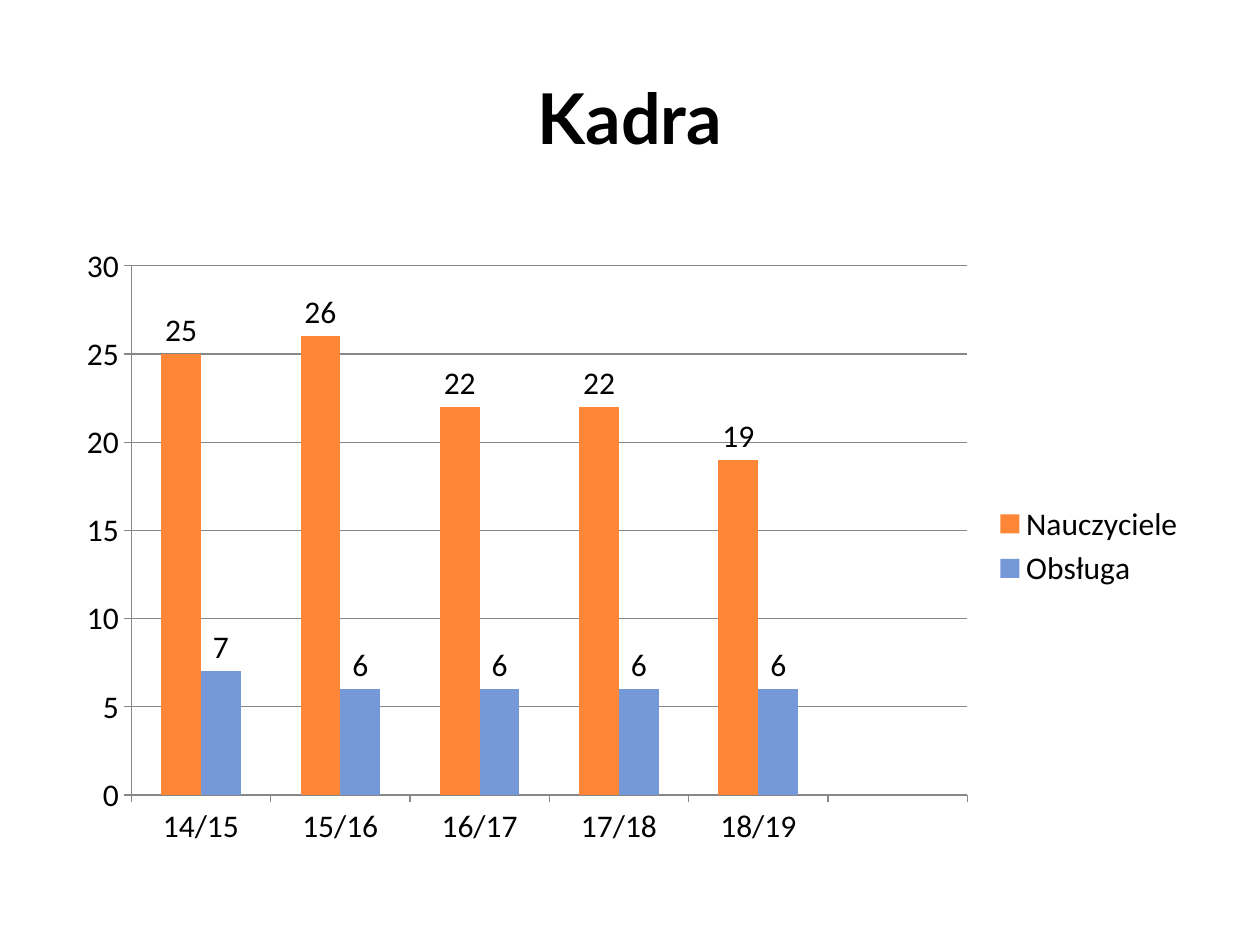
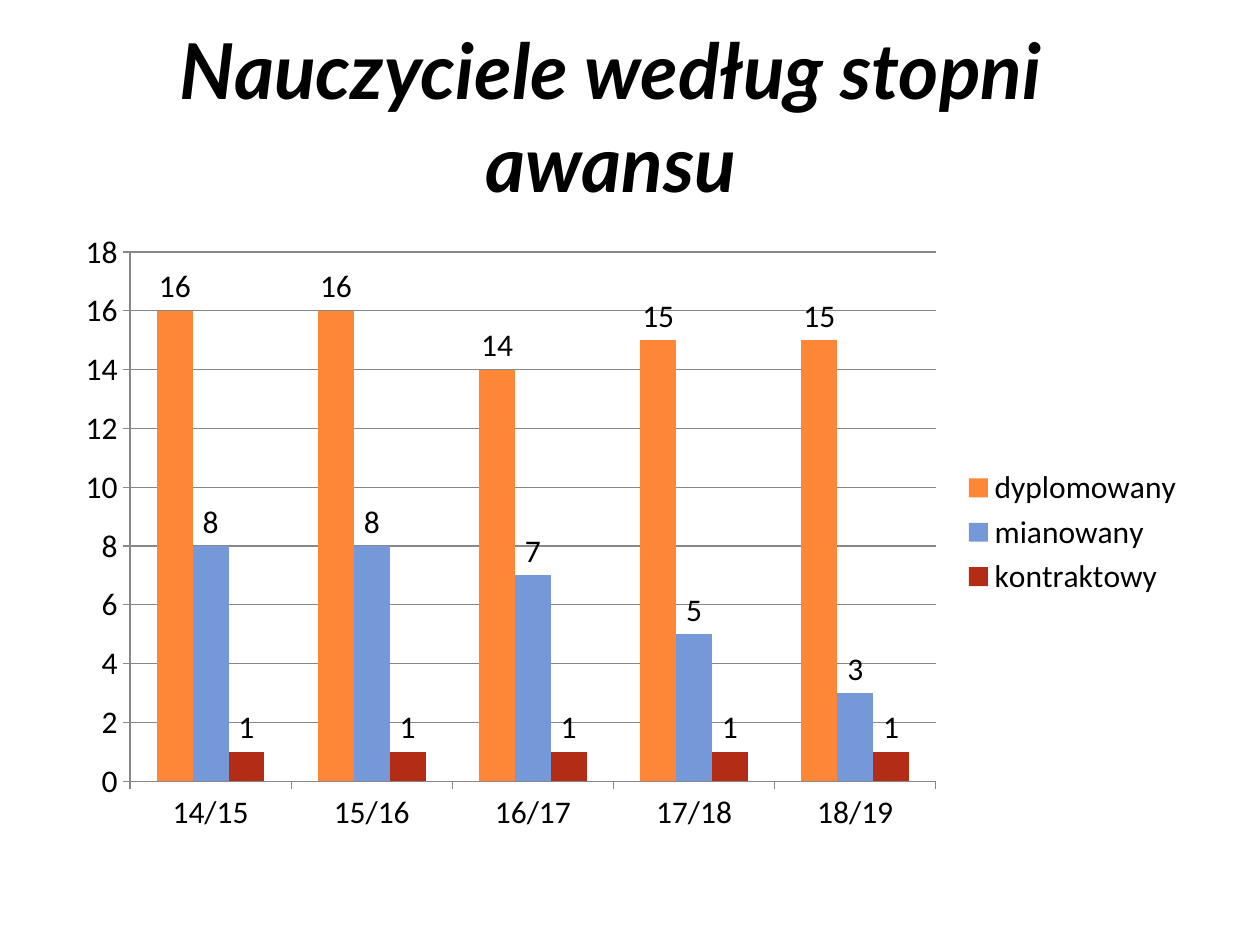
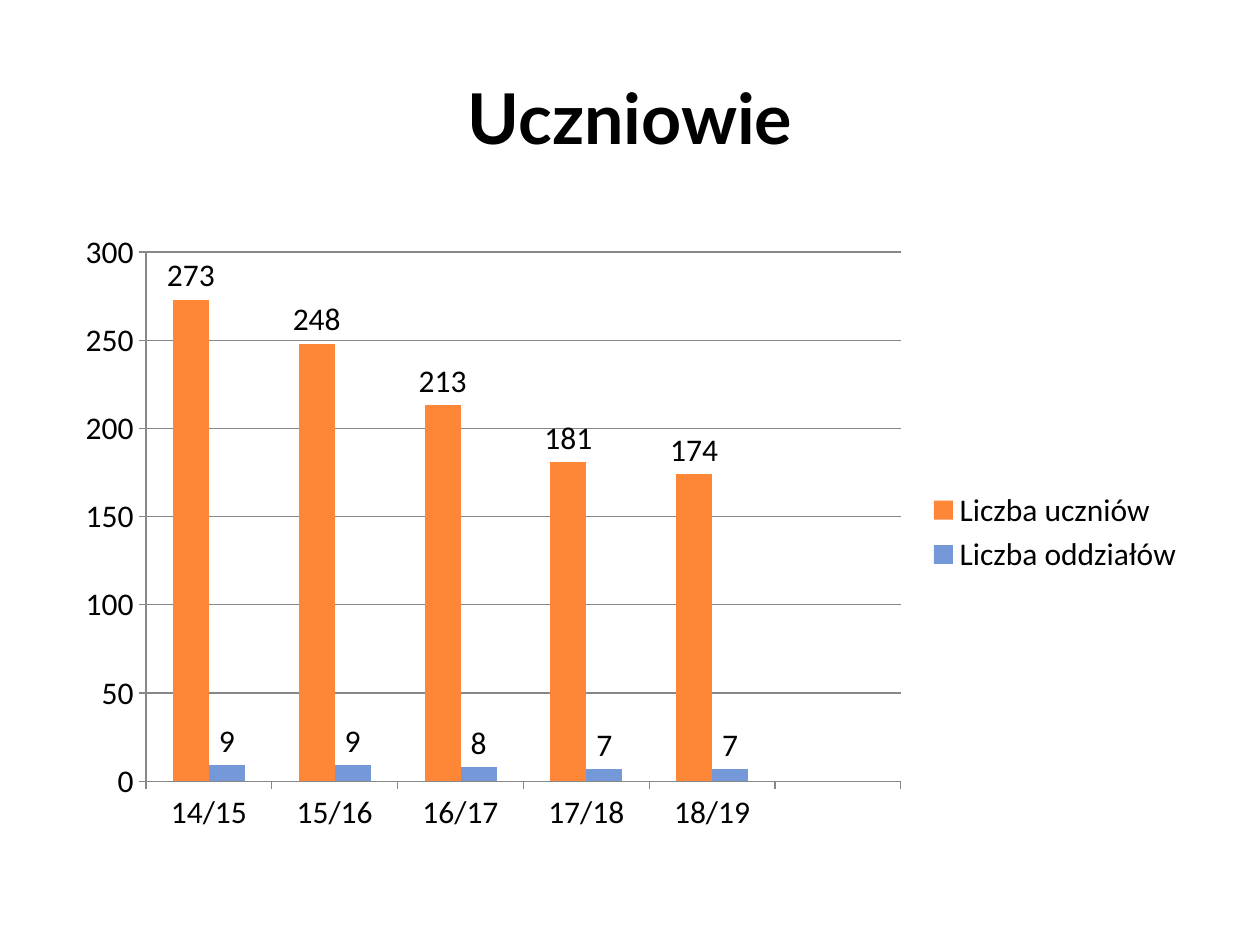
import pptx
import pptx.util
import pptx.dml.color
import pptx.chart.data
import pptx.enum.chart
import pptx.enum.text

COLS, ROWS = 40, 30
YEARS = ["14/15", "15/16", "16/17", "17/18", "18/19"]


def color(code):
    return pptx.dml.color.RGBColor.from_string(code)


class Deck:
    """Shared style and the current slide."""

    ink, rule = "000000", "878787"
    fills = ["FE8637", "7598D9", "B32C16"]
    head, body = "Lato", "Calibri"

    def __init__(self):
        self.prs = pptx.Presentation()
        self.prs.slide_width = pptx.util.Inches(10)
        self.prs.slide_height = pptx.util.Inches(7.5)
        self.slide = None

    def place(self, col, row, wide, high):
        """Turn grid cells into slide lengths."""
        x = self.prs.slide_width / COLS
        y = self.prs.slide_height / ROWS
        return [round(n) for n in (col * x, row * y, wide * x, high * y)]

    def add(self):
        self.slide = self.prs.slides.add_slide(self.prs.slide_layouts[5])
        back = self.slide.background.fill
        back.solid()
        back.fore_color.rgb = color("FFFFFF")

    def title(self, text, col=2, row=1.2, size=40, italic=None):
        box = self.slide.shapes.title
        box.left, box.top, box.width, box.height = self.place(col, row, 36, 5)
        frame = box.text_frame
        frame.text = text
        frame.auto_size = pptx.enum.text.MSO_AUTO_SIZE.NONE
        frame.vertical_anchor = pptx.enum.text.MSO_ANCHOR.MIDDLE
        line = frame.paragraphs[0]
        line.alignment = pptx.enum.text.PP_ALIGN.CENTER
        font = line.runs[0].font
        font.name, font.size = self.head, pptx.util.Pt(size)
        font.bold, font.italic = True, italic
        font.color.rgb = color(self.ink)

    def stroke(self, line):
        line.width = pptx.util.Pt(0.75)
        line.color.rgb = color(self.rule)

    def axis(self, axis, grid):
        axis.major_tick_mark = pptx.enum.chart.XL_TICK_MARK.OUTSIDE
        axis.minor_tick_mark = pptx.enum.chart.XL_TICK_MARK.NONE
        axis.has_major_gridlines = grid
        self.stroke(axis.format.line)
        if grid:
            self.stroke(axis.major_gridlines.format.line)

    def chart(self, rows, col=2, row=7, spare=False):
        """Draw columns by year; spare keeps an empty last slot."""
        data = pptx.chart.data.CategoryChartData()
        data.categories = YEARS + [""] * spare
        for name, vals in rows.items():
            data.add_series(name, vals + [None] * spare)
        chart = self.slide.shapes.add_chart(
            pptx.enum.chart.XL_CHART_TYPE.COLUMN_CLUSTERED,
            *self.place(col, row, 36, 19.8), data).chart
        chart.has_title = False
        chart.font.name, chart.font.size = self.body, pptx.util.Pt(18)
        chart.font.color.rgb = color(self.ink)

        # Axes and legend
        self.axis(chart.category_axis, False)
        self.axis(chart.value_axis, True)
        chart.has_legend = True
        chart.legend.position = pptx.enum.chart.XL_LEGEND_POSITION.RIGHT
        chart.legend.include_in_layout = False

        # Columns and their labels
        plot = chart.plots[0]
        plot.vary_by_categories = False
        plot.gap_width, plot.overlap = 150, 0
        for bar, fill in zip(plot.series, self.fills):
            bar.format.fill.solid()
            bar.format.fill.fore_color.rgb = color(fill)
            bar.data_labels.show_value = True
            bar.data_labels.position = (
                pptx.enum.chart.XL_LABEL_POSITION.OUTSIDE_END)


def main():
    deck = Deck()

    # Staff
    deck.add()
    deck.title("Kadra")
    deck.chart({"Nauczyciele": [25, 26, 22, 22, 19],
                "Obsługa": [7, 6, 6, 6, 6]}, col=2.04, row=7.44, spare=True)

    # Teachers by rank
    deck.add()
    deck.title("Nauczyciele według stopni awansu",
               col=1.4, row=1.16, size=44, italic=True)
    deck.chart({"dyplomowany": [16, 16, 14, 15, 15],
                "mianowany": [8, 8, 7, 5, 3],
                "kontraktowy": [1, 1, 1, 1, 1]})

    # Pupils
    deck.add()
    deck.title("Uczniowie")
    deck.chart({"Liczba uczniów": [273, 248, 213, 181, 174],
                "Liczba oddziałów": [9, 9, 8, 7, 7]}, spare=True)

    deck.prs.save("out.pptx")


if __name__ == "__main__":
    main()
